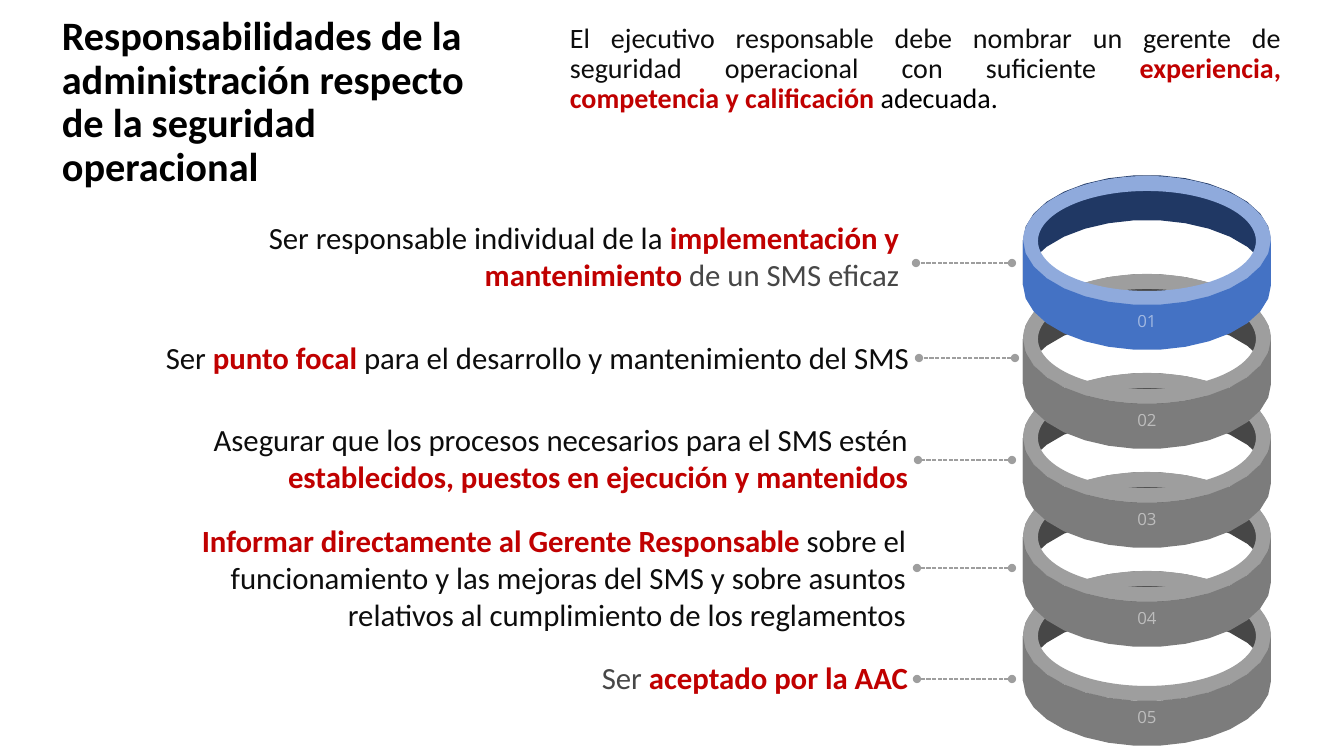
import math

import pptx
import pptx.util
import pptx.dml.color
import pptx.enum.dml
import pptx.enum.shapes
import pptx.enum.text
import pptx.oxml
import pptx.oxml.ns

RGBColor = pptx.dml.color.RGBColor
Align = pptx.enum.text.PP_ALIGN
Anchor = pptx.enum.text.MSO_ANCHOR
qn = pptx.oxml.ns.qn
DRAWING = pptx.oxml.ns.nsdecls("a")

BLACK = RGBColor(0x00, 0x00, 0x00)
INK = RGBColor(0x0D, 0x0D, 0x0D)
RED = RGBColor(0xC0, 0x00, 0x00)
WHITE = RGBColor(0xFF, 0xFF, 0xFF)
DARK_GREY = RGBColor(0x47, 0x47, 0x47)
MID_GREY = RGBColor(0x7C, 0x7C, 0x7C)
LIGHT_GREY = RGBColor(0x9E, 0x9E, 0x9E)
NAVY = RGBColor(0x20, 0x38, 0x64)
BLUE = RGBColor(0x44, 0x72, 0xC4)
PALE_BLUE = RGBColor(0x8F, 0xAA, 0xDC)

PX = 914400 / 100.8

deck = pptx.Presentation()
deck.slide_width = round(1344 * PX)
deck.slide_height = round(756 * PX)
page = deck.slides.add_slide(deck.slide_layouts[6])


def add_text(bounds, spans, size, align, anchor=Anchor.TOP, line_spacing=None):
    """Place one paragraph; spans are (text, colour, bold)."""
    box = page.shapes.add_textbox(*(round(value * PX) for value in bounds))
    box.text_frame.word_wrap = True
    box.text_frame.vertical_anchor = anchor
    para = box.text_frame.paragraphs[0]
    para.alignment = align
    para.line_spacing = line_spacing
    for text, colour, bold in spans:
        span = para.add_run()
        span.text = text
        span.font.name = "Calibri"
        span.font.size = pptx.util.Pt(size)
        span.font.bold = bold
        span.font.color.rgb = colour


def add_band(y, side):
    """Draw half of a ring's wall: side is 1 for the front, -1 for the back."""
    edge = [(RING_X + RADIUS_X * math.cos(math.radians(angle)),
             y + side * RADIUS_Y * math.sin(math.radians(angle)))
            for angle in range(0, 181, 12)]
    outline = edge + [(x, edge_y + BAND) for x, edge_y in reversed(edge)]
    points = [(round(x * PX), round(point_y * PX)) for x, point_y in outline]
    builder = page.shapes.build_freeform(*points[0], scale=1.0)
    builder.add_line_segments(points[1:], close=True)
    return builder.convert_to_shape()


add_text((52, 19, 452, 176),
         [("Responsabilidades de la administración respecto de la seguridad operacional",
           BLACK, True)],
         28.8, Align.LEFT, Anchor.BOTTOM, 0.9)
add_text((560, 19, 731, 147),
         [("El ejecutivo responsable debe nombrar un gerente de seguridad operacional "
           "con suficiente ", INK, False),
          ("experiencia, competencia y calificación", RED, True),
          (" adecuada.", BLACK, False)],
         20, Align.JUSTIFY, line_spacing=0.9)

# Stack of rings, lowest first
RING_X = 1147
RADIUS_X = 124
RADIUS_Y = 65
RIM = 15
BAND = 45
FIRST_RING_Y = 240
RING_PITCH = 99

for number in range(5, 0, -1):
    y = FIRST_RING_Y + (number - 1) * RING_PITCH
    is_top = number == 1
    colours = (NAVY, PALE_BLUE, BLUE) if is_top else (DARK_GREY, LIGHT_GREY, MID_GREY)
    rim_y = y + 1 if is_top else y
    back = add_band(y, -1)
    rim = page.shapes.add_shape(
        pptx.enum.shapes.MSO_SHAPE.DONUT,
        *(round(value * PX) for value in
          (RING_X - RADIUS_X, rim_y - RADIUS_Y, 2 * RADIUS_X, 2 * RADIUS_Y)))
    rim.adjustments[0] = RIM / (2 * RADIUS_Y)
    front = add_band(y, 1)
    for part, colour in zip((back, rim, front), colours):
        part.shadow.inherit = False
        part.fill.solid()
        part.fill.fore_color.rgb = colour
        part.line.fill.background()

    frame = front.text_frame
    frame.margin_left = frame.margin_right = frame.margin_top = 0
    frame.margin_bottom = round(19 * PX)
    frame.vertical_anchor = Anchor.BOTTOM
    frame.text = f"{number:02}"
    para = frame.paragraphs[0]
    para.alignment = Align.CENTER
    font = para.runs[0].font
    font.name = "Open Sans"
    font.size = pptx.util.Pt(12)
    font.color.rgb = WHITE
    text_colour = next(front.element.iter(qn("a:r"))).find(".//" + qn("a:srgbClr"))
    text_colour.append(pptx.oxml.parse_xml(f'<a:alpha {DRAWING} val="50000"/>'))

# Duties: text bounds, leader (left, right, y), spans
duties = [
    ((152, 214, 757, 75), (916, 1012, 263),
     [("Ser responsable individual de la ", INK, False),
      ("implementación y mantenimiento", RED, True),
      (" de un SMS eficaz", DARK_GREY, False)]),
    ((152, 334, 767, 64), (919, 1015, 358),
     [("Ser ", INK, False), ("punto focal ", RED, True),
      ("para el desarrollo y mantenimiento del SMS", INK, False)]),
    ((150, 416, 768, 99), (918, 1012, 460),
     [("Asegurar que los procesos necesarios para el SMS estén ", INK, False),
      ("establecidos, puestos en ejecución y mantenidos", RED, True)]),
    ((108, 517, 808, 94), (917, 1012, 568),
     [("Informar directamente al Gerente Responsable ", RED, True),
      ("sobre el funcionamiento y las mejoras del SMS y sobre asuntos relativos "
       "al cumplimiento de los reglamentos", INK, False)]),
    ((157, 654, 761, 73), (917, 1012, 679),
     [("Ser ", DARK_GREY, False), ("aceptado por la AAC", RED, True)]),
]
for bounds, (left, right, y), spans in duties:
    add_text(bounds, spans, 22, Align.RIGHT)
    leader = page.shapes.add_connector(
        pptx.enum.shapes.MSO_CONNECTOR.STRAIGHT,
        *(round(value * PX) for value in (right, y, left, y)))
    leader.line.color.rgb = LIGHT_GREY
    leader.line.width = pptx.util.Pt(1)
    leader.line.dash_style = pptx.enum.dml.MSO_LINE.SQUARE_DOT
    properties = leader.element.spPr
    outline = properties.find(qn("a:ln"))
    for tag in ("headEnd", "tailEnd"):
        outline.append(pptx.oxml.parse_xml(f'<a:{tag} {DRAWING} type="oval"/>'))
    properties.append(pptx.oxml.parse_xml(f'<a:effectLst {DRAWING}/>'))

deck.save("out.pptx")
